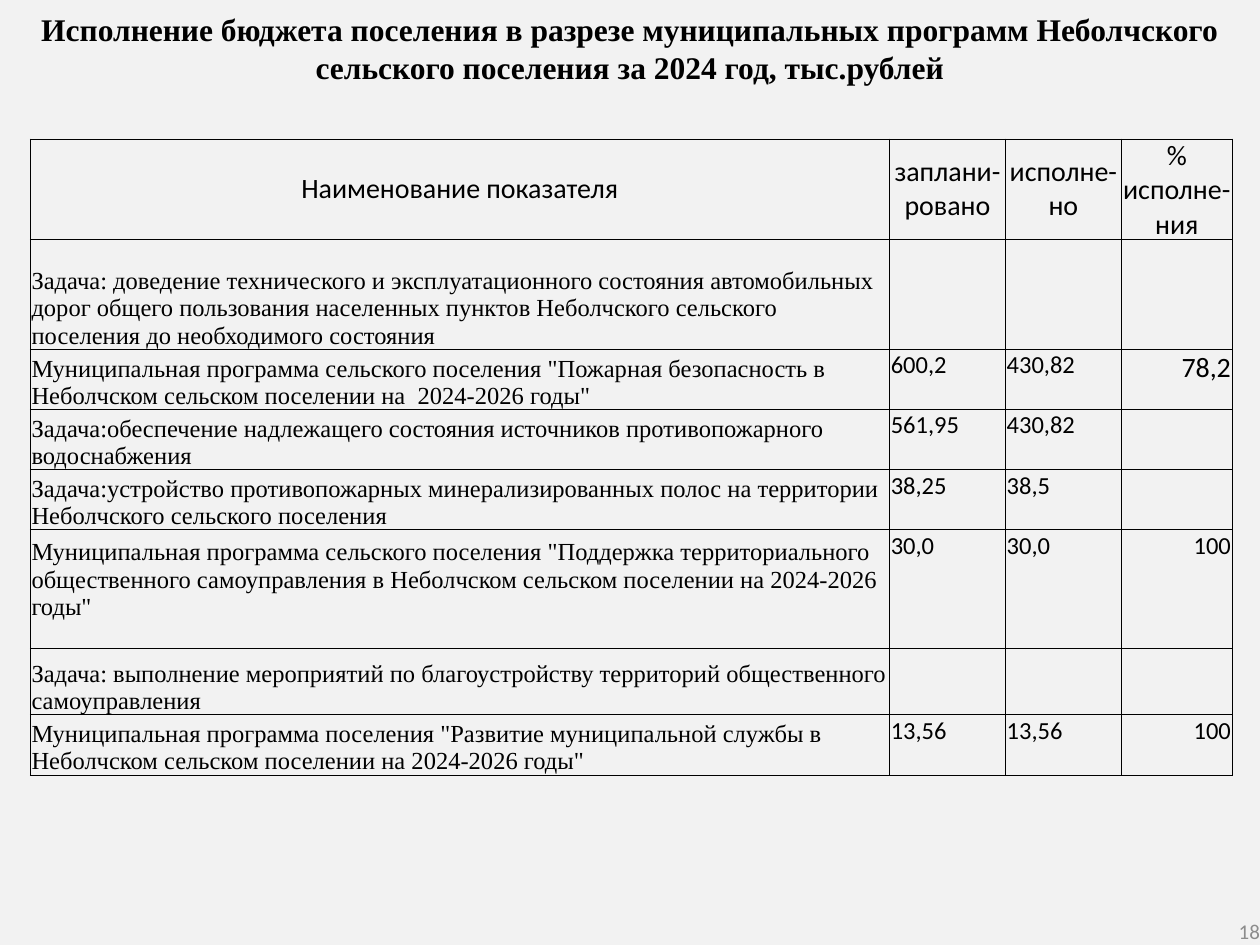
from dataclasses import dataclass
from typing import Any
from lxml.etree import SubElement
from pptx import Presentation
from pptx.dml.color import RGBColor
from pptx.enum.text import MSO_ANCHOR, PP_ALIGN
from pptx.oxml.ns import qn
from pptx.util import Inches, Pt

BLACK = RGBColor(0, 0, 0)
GRAY = RGBColor(0x8C, 0x8C, 0x8C)
PALE = RGBColor(0xF2, 0xF2, 0xF2)
WIDE, HIGH = Inches(10), Inches(7.5)
SERIF, SANS = "Times New Roman", "Calibri"
LEFT, MID, RIGHT = PP_ALIGN.LEFT, PP_ALIGN.CENTER, PP_ALIGN.RIGHT
TOP, HALF, LOW = MSO_ANCHOR.TOP, MSO_ANCHOR.MIDDLE, MSO_ANCHOR.BOTTOM
SIDES = ("left", "top", "right", "bottom")


@dataclass
class Style:
    face: str
    size: float
    align: Any = LEFT
    anchor: Any = TOP
    pads: tuple = (0.01, 0.01, 0.01, 0)
    color: RGBColor = BLACK
    bold: bool = False


@dataclass
class Row:
    high: float
    name: str
    plan: str = ""
    done: str = ""
    rate: str = ""
    foot: float = 0
    big: float = 14


TITLE = Style(SERIF, 18, MID, TOP, (0.1, 0.08, 0.1, 0.05), bold=True)
HEAD = Style(SANS, 16, MID, HALF, (0, 0, 0, 0))
VALUE = Style(SANS, 14)
PAGE = Style(SANS, 12, RIGHT, HALF, (0, 0, 0, 0), GRAY)

COLS = (6.82, 0.92, 0.92, 0.88)
ROWS = (
    Row(0.8, "Наименование показателя", "заплани-\nровано", "исполне-но", "% исполне-ния"),
    Row(0.87, "Задача: доведение технического и эксплуатационного состояния "
        "автомобильных дорог общего пользования населенных пунктов Неболчского "
        "сельского поселения до необходимого состояния"),
    Row(0.47, 'Муниципальная программа сельского поселения "Пожарная безопасность '
        'в Неболчском сельском поселении на  2024-2026 годы"',
        "600,2", "430,82", "78,2", big=16),
    Row(0.47, "Задача:обеспечение надлежащего состояния источников "
        "противопожарного водоснабжения", "561,95", "430,82"),
    Row(0.47, "Задача:устройство противопожарных минерализированных полос на "
        "территории Неболчского сельского поселения", "38,25", "38,5"),
    Row(0.94, 'Муниципальная программа сельского поселения "Поддержка '
        "территориального общественного самоуправления в Неболчском сельском "
        'поселении на 2024-2026 годы"', "30,0", "30,0", "100", foot=0.22),
    Row(0.53, "Задача: выполнение мероприятий по благоустройству территорий "
        "общественного самоуправления"),
    Row(0.47, 'Муниципальная программа поселения "Развитие муниципальной службы '
        'в Неболчском сельском поселении на 2024-2026 годы"',
        "13,56", "13,56", "100"),
)


def write(frame: Any, text: str, style: Style) -> None:
    para = frame.paragraphs[0]
    para.text = text.replace("\n", "\v")
    para.alignment = style.align
    form = {"name": style.face, "size": Pt(style.size), "bold": style.bold}
    for run in para.runs:
        for key, val in form.items():
            setattr(run.font, key, val)
        run.font.color.rgb = style.color


def pad(box: Any, style: Style) -> None:
    form = {f"margin_{side}": Inches(gap) for side, gap in zip(SIDES, style.pads)}
    for key, val in (form | {"vertical_anchor": style.anchor}).items():
        setattr(box, key, val)


def label(slide: Any, share: tuple, text: str, style: Style) -> None:
    left, top, wide, high = share
    box = slide.shapes.add_textbox(
        int(left * WIDE), int(top * HIGH), int(wide * WIDE), int(high * HIGH))
    frame = box.text_frame
    frame.word_wrap = True
    pad(frame, style)
    write(frame, text, style)


def border(cell: Any) -> None:
    props = cell._tc.get_or_add_tcPr()
    for tag in ("a:lnL", "a:lnR", "a:lnT", "a:lnB"):
        line = SubElement(props, qn(tag), w=str(Pt(0.5)))
        fill = SubElement(line, qn("a:solidFill"))
        SubElement(fill, qn("a:srgbClr"), val=str(BLACK))


def pick(row: Row, col: int) -> Style:
    if row is ROWS[0]:
        return HEAD
    if col == 0:
        return Style(SERIF, 14, LEFT, LOW, (0.01, 0.01, 0.01, row.foot))
    return Style(SANS, row.big, RIGHT) if col == 3 else VALUE


def grid(slide: Any) -> None:
    high = sum(row.high for row in ROWS)
    table = slide.shapes.add_table(
        len(ROWS), len(COLS), int(0.024 * WIDE), int(0.147 * HIGH),
        Inches(sum(COLS)), Inches(high)).table
    for key in ("first_row", "horz_banding"):
        setattr(table, key, False)
    for col, wide in zip(table.columns, COLS):
        col.width = Inches(wide)
    for y, row in enumerate(ROWS):
        table.rows[y].height = Inches(row.high)
        for x, text in enumerate((row.name, row.plan, row.done, row.rate)):
            cell, style = table.cell(y, x), pick(row, x)
            pad(cell, style)
            border(cell)
            cell.fill.background()
            if text:
                write(cell.text_frame, text, style)


def main() -> None:
    deck = Presentation()
    deck.slide_width, deck.slide_height = WIDE, HIGH
    slide = deck.slides.add_slide(deck.slide_layouts[6])
    fill = slide.background.fill
    fill.solid()
    fill.fore_color.rgb = PALE
    label(slide, (0, 0, 1, 0.1), "Исполнение бюджета поселения в разрезе "
          "муниципальных программ Неболчского сельского поселения за 2024 год, "
          "тыс.рублей", TITLE)
    grid(slide)
    label(slide, (0.77, 0.97, 0.23, 0.03), "18", PAGE)
    deck.save("out.pptx")


if __name__ == "__main__":
    main()
